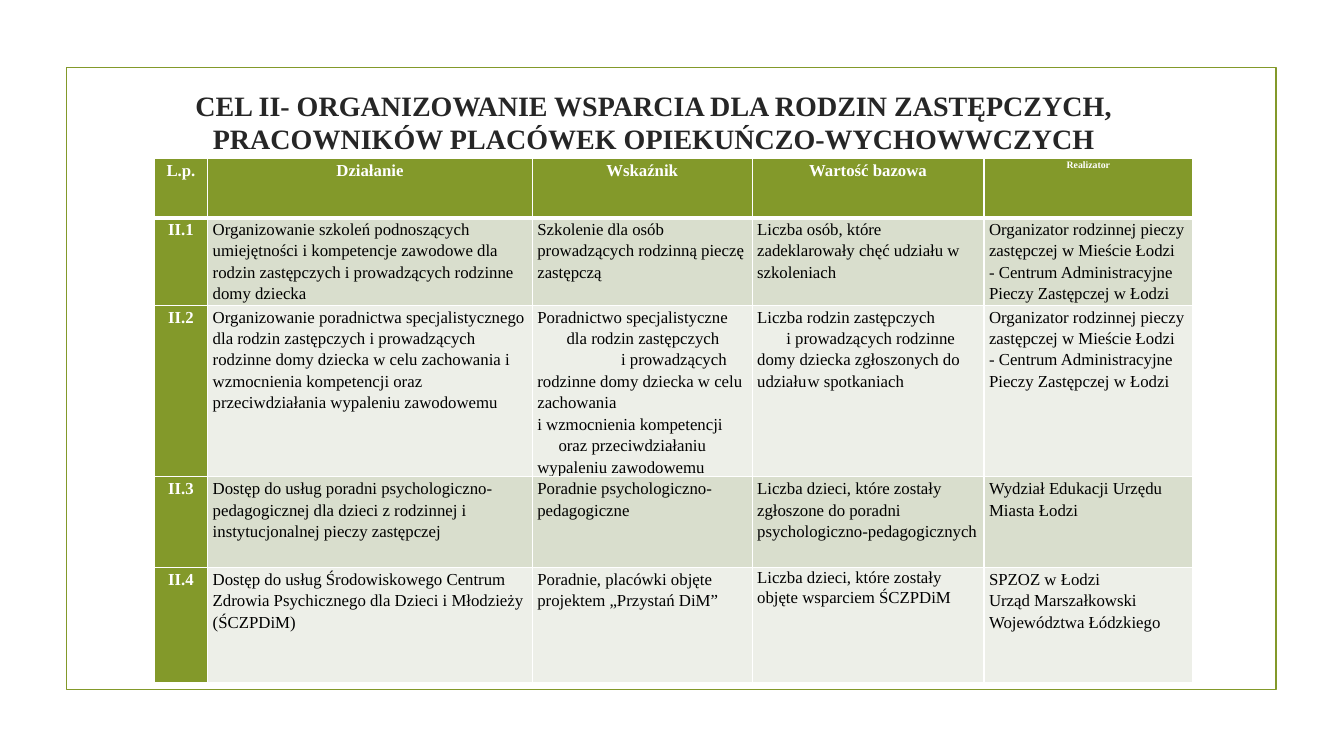
from lxml.etree import SubElement
from pptx import Presentation
from pptx.dml.color import RGBColor
from pptx.enum.shapes import MSO_SHAPE as Shape
from pptx.enum.text import MSO_ANCHOR as Anchor, PP_ALIGN as Align
from pptx.oxml.ns import qn
from pptx.util import Inches, Pt

COLORS = {"green": "83992A", "title": "262626", "text": "000000",
          "white": "FFFFFF", "odd": "D9DECD", "even": "EDEFE8"}
FONT = "Times New Roman"
TITLE = ("CEL II- ORGANIZOWANIE WSPARCIA DLA RODZIN ZASTĘPCZYCH, "
         "PRACOWNIKÓW PLACÓWEK OPIEKUŃCZO-WYCHOWWCZYCH")
COLUMN_WIDTHS = [0.53, 3.22, 2.18, 2.3, 2.07]
ROW_HEIGHTS = [0.59, 0.87, 1.53, 0.9, 1.14]
HEADINGS = ["L.p.", "Działanie", "Wskaźnik", "Wartość bazowa", "Realizator"]
ORGANIZER = ["Organizator rodzinnej pieczy zastępczej w Mieście Łodzi",
             "- Centrum Administracyjne Pieczy Zastępczej w Łodzi"]
ACTIONS = [
    ["II.1",
     "Organizowanie szkoleń podnoszących umiejętności i kompetencje zawodowe "
     "dla rodzin zastępczych i prowadzących rodzinne domy dziecka",
     "Szkolenie dla osób prowadzących rodzinną pieczę zastępczą",
     "Liczba osób, które zadeklarowały chęć udziału w szkoleniach",
     ORGANIZER],
    ["II.2",
     "Organizowanie poradnictwa specjalistycznego dla rodzin zastępczych "
     "i prowadzących rodzinne domy dziecka w celu zachowania i wzmocnienia "
     "kompetencji oraz przeciwdziałania wypaleniu zawodowemu",
     ["Poradnictwo specjalistyczne",
      ("dla rodzin zastępczych", 0.29),
      ("i prowadzących rodzinne domy dziecka w celu zachowania", 0.83),
      "i wzmocnienia kompetencji",
      ("oraz przeciwdziałaniu wypaleniu zawodowemu", 0.21)],
     ["Liczba rodzin zastępczych",
      ("i prowadzących rodzinne domy dziecka zgłoszonych do udziału\t"
       "w spotkaniach", 0.29)],
     ORGANIZER],
    ["II.3",
     "Dostęp do usług poradni psychologiczno-pedagogicznej dla dzieci "
     "z rodzinnej i instytucjonalnej pieczy zastępczej",
     "Poradnie psychologiczno-pedagogiczne",
     "Liczba dzieci, które zostały zgłoszone do poradni "
     "psychologiczno-pedagogicznych",
     "Wydział Edukacji Urzędu Miasta Łodzi"],
    ["II.4",
     "Dostęp do usług Środowiskowego Centrum Zdrowia Psychicznego dla Dzieci "
     "i Młodzieży (ŚCZPDiM)",
     "Poradnie, placówki objęte projektem „Przystań DiM”",
     "Liczba dzieci, które zostały objęte wsparciem ŚCZPDiM",
     ["SPZOZ w Łodzi", "Urząd Marszałkowski Województwa Łódzkiego"]],
]
TAB_STOP = 0.78


def color(name):
    """Return the named colour."""
    return RGBColor.from_string(COLORS[name])


def add_span(para, text, size, shade, bold):
    """Add formatted text to a paragraph."""
    span = para.add_run()
    span.text = text
    formats = {"name": FONT, "size": Pt(size), "bold": bold}
    for key, value in formats.items():
        setattr(span.font, key, value)
    span.font.color.rgb = color(shade)


def add_frame(page):
    """Draw the green frame around the content."""
    frame = page.shapes.add_shape(
        Shape.RECTANGLE, Inches(0.66), Inches(0.67), Inches(12), Inches(6.17))
    frame.shadow.inherit = False
    frame.fill.background()
    frame.line.color.rgb = color("green")
    frame.line.width = Pt(1.25)


def fill_title(page):
    """Place and format the slide title."""
    title = page.shapes.title
    places = {"left": 1.03, "top": 0.85, "width": 10.91, "height": 0.72}
    for key, value in places.items():
        setattr(title, key, Inches(value))
    box = title.text_frame
    box.word_wrap = True
    box.vertical_anchor = Anchor.MIDDLE
    para = box.paragraphs[0]
    para.alignment = Align.CENTER
    add_span(para, TITLE, 20, "title", True)


def set_borders(cell, top, bottom):
    """Give a cell white borders of the given widths."""
    properties = cell._tc.get_or_add_tcPr()
    for side, width in {"L": 1, "R": 1, "T": top, "B": bottom}.items():
        line = SubElement(properties, qn(f"a:ln{side}"), w=str(Pt(width)))
        solid = SubElement(line, qn("a:solidFill"))
        SubElement(solid, qn("a:srgbClr"), val=COLORS["white"])


def set_indent(para, text, indent):
    """Indent the first line and add a stop for any tab."""
    properties = para._p.get_or_add_pPr()
    properties.set("marL", "0")
    properties.set("indent", str(Inches(indent)))
    if "\t" in text:
        stops = SubElement(properties, qn("a:tabLst"))
        SubElement(stops, qn("a:tab"), pos=str(Inches(TAB_STOP)), algn="l")


def fill_cell(cell, content, fill, strong, size=12, spacing=1.15):
    """Format a cell and write its paragraphs."""
    margins = {"margin_left": 0.05, "margin_right": 0.05,
               "margin_top": 0, "margin_bottom": 0}
    for key, value in margins.items():
        setattr(cell, key, Inches(value))
    cell.fill.solid()
    cell.fill.fore_color.rgb = color(fill)
    box = cell.text_frame
    entries = content if isinstance(content, list) else [content]
    for index, entry in enumerate(entries):
        text, indent = entry if isinstance(entry, tuple) else (entry, 0)
        para = box.add_paragraph() if index else box.paragraphs[0]
        para.alignment = Align.CENTER if strong else Align.LEFT
        para.line_spacing = spacing
        set_indent(para, text, indent)
        add_span(para, text, size, "white" if strong else "text", strong)


def add_actions_table(page):
    """Build the table of actions."""
    rows = [HEADINGS] + ACTIONS
    table = page.shapes.add_table(
        len(rows), len(HEADINGS), Inches(1.53), Inches(1.57),
        Inches(sum(COLUMN_WIDTHS)), Inches(sum(ROW_HEIGHTS))).table
    for column, width in zip(table.columns, COLUMN_WIDTHS):
        column.width = Inches(width)
    for row, height in zip(table.rows, ROW_HEIGHTS):
        row.height = Inches(height)
    for r, contents in enumerate(rows):
        for c, content in enumerate(contents):
            cell = table.cell(r, c)
            strong = r == 0 or c == 0
            fill = "green" if strong else "odd" if r % 2 else "even"
            set_borders(cell, 3 if r == 1 else 1, 3 if r == 0 else 1)
            fill_cell(cell, content, fill, strong,
                      size=7 if content == "Realizator" else 12,
                      spacing=1.07 if (r, c) == (4, 3) else 1.15)


def main():
    """Build and save the deck."""
    deck = Presentation()
    deck.slide_width = Inches(13.33)
    deck.slide_height = Inches(7.5)
    page = deck.slides.add_slide(deck.slide_layouts[5])
    add_frame(page)
    fill_title(page)
    add_actions_table(page)
    deck.save("out.pptx")


if __name__ == "__main__":
    main()
